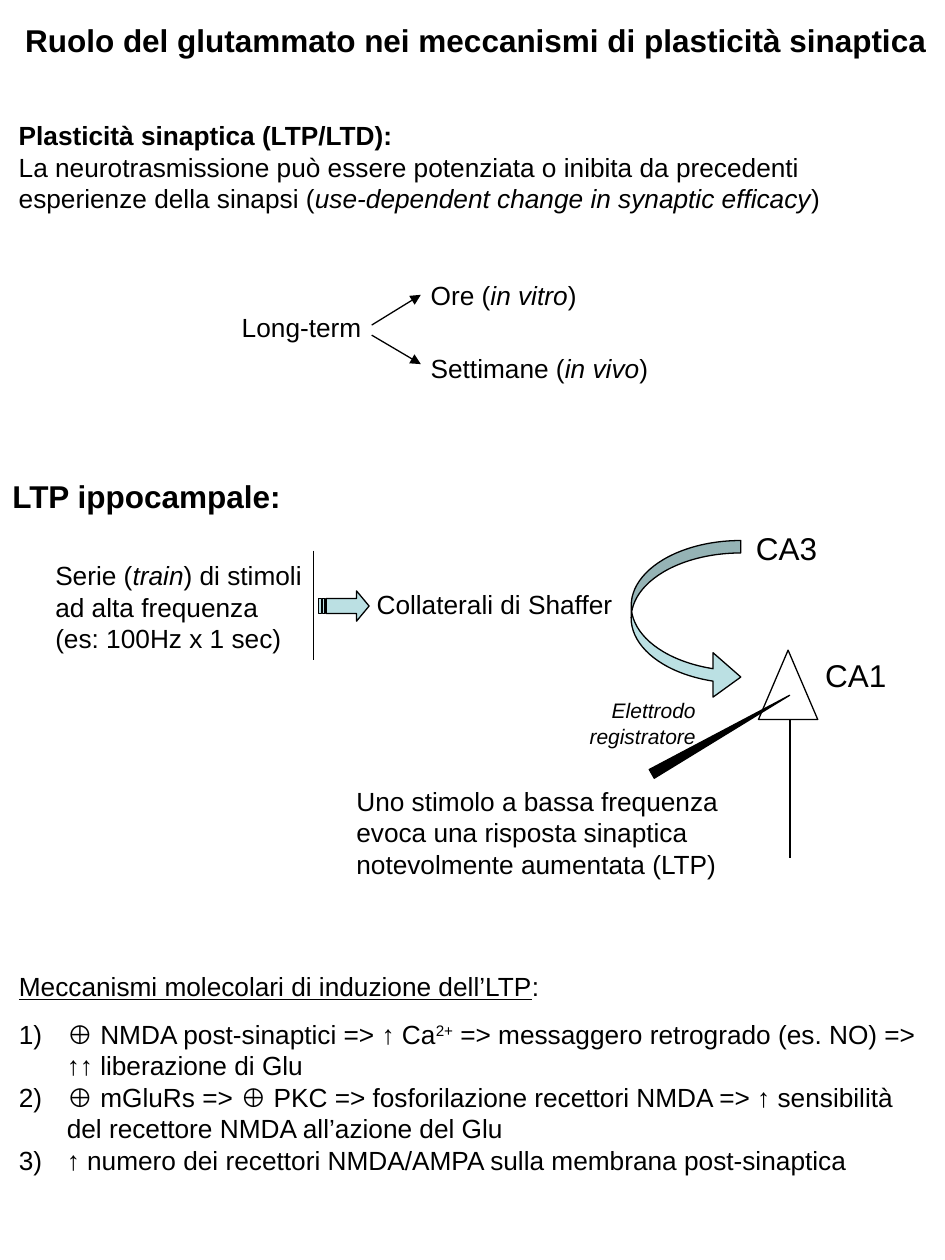
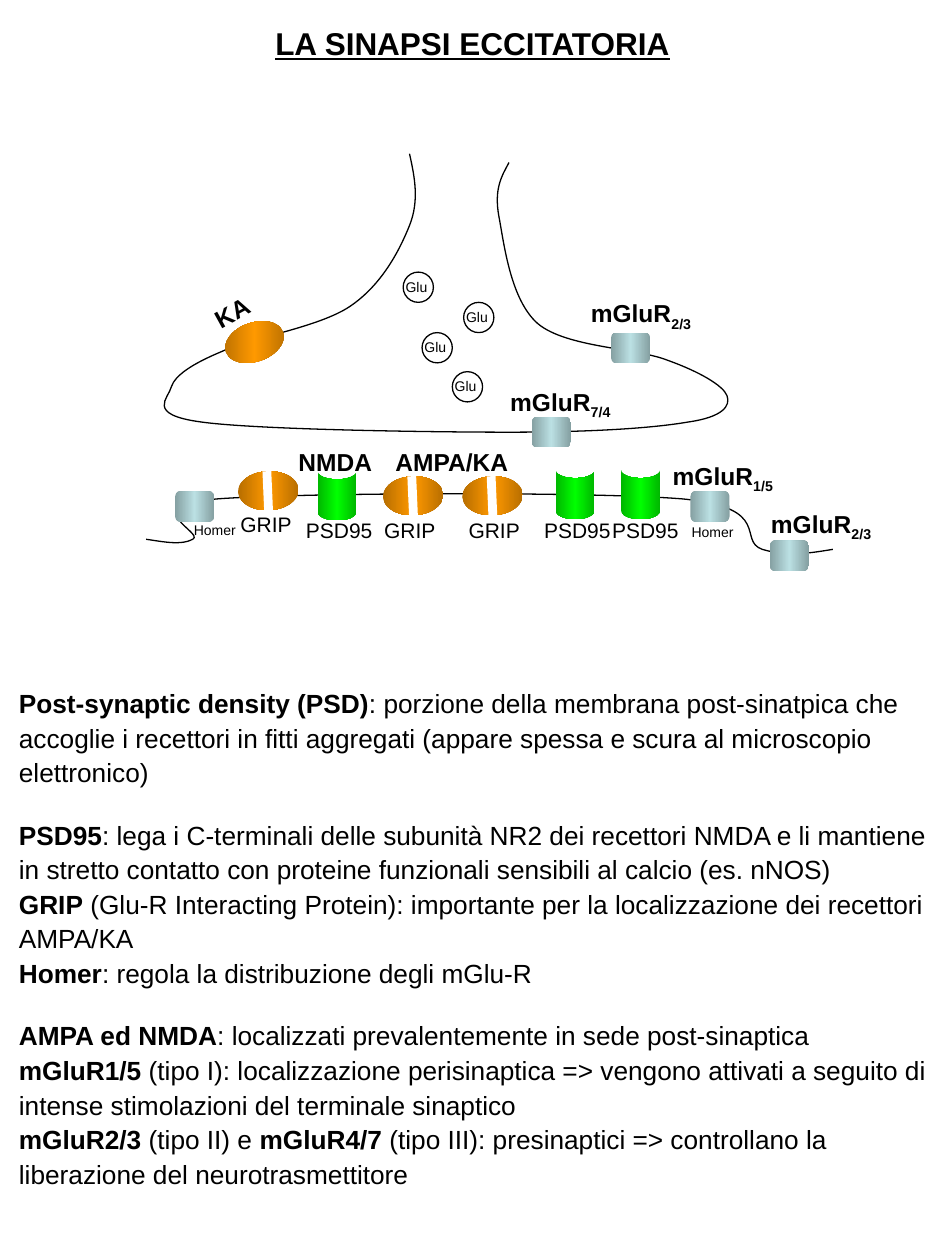
from copy import deepcopy
from dataclasses import dataclass
from typing import NamedTuple

from lxml.etree import SubElement
from pptx import Presentation
from pptx.dml.color import RGBColor
from pptx.enum.shapes import MSO_CONNECTOR, MSO_SHAPE
from pptx.enum.text import MSO_ANCHOR, MSO_AUTO_SIZE, PP_ALIGN
from pptx.oxml.ns import qn
from pptx.util import Pt

PX = 9144  # one px is a hundredth of an inch
FONT = "Arial"
COLORS = {
    "ink": "000000", "white": "FFFFFF", "ice": "BBE0E3",
    "gold": "FF9900", "lime": "00FF00",
}
BASE = {"^": "30000", "_": "-25000"}
SHADE = "46275"  # dark edge of each receptor


class Box(NamedTuple):
    x: int
    y: int
    w: int
    h: int


class Run(NamedTuple):
    text: str
    marks: str = ""  # b, i, u, ^ (raised), _ (lowered)


@dataclass
class Para:
    runs: list[Run]
    gap: float = 0
    hang: int = 0
    count: bool = False


@dataclass
class Kind:
    form: MSO_SHAPE
    w: int
    h: int
    color: str
    turn: float = 0


def tint(name: str) -> RGBColor:
    return RGBColor.from_string(COLORS[name])


# Text
def write(shape, box: Box, paras: list[Para], size: int, wrap: bool = False,
          align=PP_ALIGN.LEFT, lead: float = 1.0) -> None:
    shape.left, shape.top, shape.width, shape.height = (v * PX for v in box)
    frame = shape.text_frame
    frame.word_wrap = wrap
    frame.auto_size = MSO_AUTO_SIZE.SHAPE_TO_FIT_TEXT
    frame.vertical_anchor = MSO_ANCHOR.TOP
    for i, item in enumerate(paras):
        para = frame.add_paragraph() if i else frame.paragraphs[0]
        para.alignment = align
        para.line_spacing = lead
        para.space_before, para.space_after = Pt(item.gap), Pt(0)
        props = para._p.get_or_add_pPr()
        props.set("marL", str(item.hang * PX))
        props.set("indent", str(-item.hang * PX))
        if item.count:
            SubElement(props, qn("a:buFont"), typeface="+mj-lt")
            SubElement(props, qn("a:buAutoNum"), type="arabicParenR")
        else:
            SubElement(props, qn("a:buNone"))
        for part in item.runs:
            run = para.add_run()
            run.text = part.text
            font = run.font
            font.name, font.size = FONT, Pt(size)
            font.color.rgb = tint("ink")
            font.bold, font.italic = "b" in part.marks, "i" in part.marks
            font.underline = "u" in part.marks
            for mark, shift in BASE.items():
                if mark in part.marks:
                    run._r.get_or_add_rPr().set("baseline", shift)


def label(slide, box: Box, paras: list[Para], size: int = 15,
          wrap: bool = False, align=PP_ALIGN.LEFT, turn: float = 0) -> None:
    shape = slide.shapes.add_textbox(0, 0, 0, 0)
    write(shape, box, paras, size, wrap, align)
    shape.rotation = turn


def word(slide, box: Box, text: str, size: int = 15, marks: str = "",
         turn: float = 0) -> None:
    label(slide, box, [Para([Run(text, marks)])], size, turn=turn)


# Shapes
def dress(shape, fill: str = "", line: bool = True) -> None:
    shape.shadow.inherit = False
    if fill:
        shape.fill.solid()
        shape.fill.fore_color.rgb = tint(fill)
    else:
        shape.fill.background()
    if line:
        shape.line.color.rgb = tint("ink")
        shape.line.width = Pt(0.75)
    else:
        shape.line.fill.background()


def draw(slide, form: MSO_SHAPE, box: Box, fill: str = "", line: bool = True,
         turn: float = 0, adjust: tuple = ()):
    shape = slide.shapes.add_shape(form, *(v * PX for v in box))
    dress(shape, fill, line)
    shape.rotation = turn
    for i, value in enumerate(adjust):
        shape.adjustments[i] = value
    return shape


def place(slide, kind: Kind, x: int, y: int, turn: float | None = None) -> None:
    shape = draw(slide, kind.form, Box(x, y, kind.w, kind.h), line=False,
                 turn=kind.turn if turn is None else turn)
    fill = shape.fill
    fill.gradient()
    fill.gradient_angle = 0
    grad = shape._element.spPr.find(qn("a:gradFill"))
    grad.set("rotWithShape", "0")
    stops = grad.find(qn("a:gsLst"))
    stops.insert(1, deepcopy(stops[0]))
    for stop, spot in zip(fill.gradient_stops, (0, 0.5, 1)):
        stop.position = spot
        stop.color.rgb = tint(kind.color)
    for edge in (stops[0], stops[2]):
        SubElement(edge[0], qn("a:shade"), val=SHADE)


def link(slide, start: tuple, end: tuple, arrow: bool = False) -> None:
    line = slide.shapes.add_connector(
        MSO_CONNECTOR.STRAIGHT, *(v * PX for v in start + end))
    line.line.color.rgb = tint("ink")
    line.line.width = Pt(0.75)
    if arrow:
        SubElement(line.line._get_or_add_ln(), qn("a:tailEnd"), type="triangle")
    SubElement(line._element.spPr, qn("a:effectLst"))


def trace(slide, paths: list, fill: str = "", close: bool = True):
    pen = slide.shapes.build_freeform(*(v * PX for v in paths[0][0]), scale=1.0)
    for i, path in enumerate(paths):
        points = [(x * PX, y * PX) for x, y in path]
        if i:
            pen.move_to(*points[0])
        pen.add_line_segments(points[1:], close=close)
    shape = pen.convert_to_shape()
    dress(shape, fill)
    return shape


def curve(slide, knots: list) -> None:
    shape = trace(slide, [knots], close=False)
    track = next(shape._element.iter(qn("a:path")))
    lines = track.findall(qn("a:lnTo"))
    for i in range(0, len(lines), 3):
        bend = SubElement(track, qn("a:cubicBezTo"))
        for line in lines[i:i + 3]:
            bend.append(line[0])
            track.remove(line)


def start(deck, head: Run, spot: Box, align):
    slide = deck.slides.add_slide(deck.slide_layouts[1])
    write(slide.shapes.title, spot, [Para([head])], 18, align=align)
    return slide, slide.placeholders[1]


# Slide 1: plasticity and LTP
def plastic(deck) -> None:
    slide, body = start(
        deck, Run("Ruolo del glutammato nei meccanismi di plasticità sinaptica", "b"),
        Box(10, 12, 740, 40), PP_ALIGN.LEFT)
    label(slide, Box(5, 90, 745, 85), [
        Para([Run("Plasticità sinaptica (LTP/LTD):", "b")]),
        Para([Run("La neurotrasmissione può essere potenziata o inibita da precedenti "
                  "esperienze della sinapsi ("),
              Run("use-dependent change in synaptic efficacy", "i"), Run(")")]),
    ], wrap=True)

    # Duration fork
    word(slide, Box(182, 242, 115, 35), "Long-term")
    link(slide, (295, 258), (334, 234), arrow=True)
    link(slide, (295, 266), (334, 289), arrow=True)
    label(slide, Box(332, 217, 193, 93), [
        Para([Run("Ore ("), Run("in vitro", "i"), Run(")")]),
        Para([Run("Settimane ("), Run("in vivo", "i"), Run(")")], gap=23.4),
    ])

    # Stimulus
    word(slide, Box(0, 374, 235, 40), "LTP ippocampale:", 18, "b")
    label(slide, Box(34, 439, 238, 85), [
        Para([Run("Serie ("), Run("train", "i"), Run(") di stimoli ad alta frequenza")]),
        Para([Run("(es: 100Hz x 1 sec)")]),
    ], wrap=True)
    link(slide, (249, 437), (249, 524))
    head = [(283, 469), (283, 475), (259, 475), (259, 487),
            (283, 487), (283, 493), (293, 481)]
    bars = [[(a, 475), (a, 487), (b, 487), (b, 475)] for a, b in ((256, 258), (253, 255))]
    trace(slide, [head, *bars], "ice")
    word(slide, Box(289, 462, 208, 35), "Collaterali di Shaffer")

    # Neurons and electrode
    draw(slide, MSO_SHAPE.CURVED_RIGHT_ARROW, Box(501, 429, 87, 126), "ice",
         adjust=(0.114, 0.405, 0.253))
    word(slide, Box(590, 415, 69, 40), "CA3", 18)
    word(slide, Box(645, 516, 69, 40), "CA1", 18)
    draw(slide, MSO_SHAPE.ISOSCELES_TRIANGLE, Box(602, 516, 47, 55))
    link(slide, (627, 571), (627, 681))
    draw(slide, MSO_SHAPE.ISOSCELES_TRIANGLE, Box(568, 520, 8, 126), "ink",
         turn=60.3, adjust=(0.511,))
    label(slide, Box(273, 618, 314, 85), [Para([Run(
        "Uno stimolo a bassa frequenza evoca una risposta sinaptica "
        "notevolmente aumentata (LTP)")])], wrap=True)
    label(slide, Box(450, 549, 112, 50), [Para([Run("Elettrodo registratore", "i")])],
          12, wrap=True, align=PP_ALIGN.RIGHT)

    # Mechanisms
    write(body, Box(5, 765, 745, 173), [
        Para([Run("Meccanismi molecolari di induzione dell’LTP", "u"), Run(":")], hang=38),
        Para([Run("⊕ NMDA post-sinaptici => ↑ Ca"), Run("2+", "^"),
              Run(" => messaggero retrogrado (es. NO) => ↑↑ liberazione di Glu")],
             gap=9.2, hang=38, count=True),
        Para([Run("⊕ mGluRs => ⊕ PKC => fosforilazione recettori NMDA => ↑ sensibilità "
                  "del recettore NMDA all’azione del Glu")], hang=38, count=True),
        Para([Run("↑ numero dei recettori NMDA/AMPA sulla membrana post-sinaptica")],
             hang=38, count=True),
    ], 15, wrap=True)


# Slide 2: the synapse
def synapse(deck) -> None:
    slide, body = start(deck, Run("LA SINAPSI ECCITATORIA", "bu"),
                        Box(206, 14, 338, 40), PP_ALIGN.CENTER)
    block = Kind(MSO_SHAPE.FLOWCHART_ALTERNATE_PROCESS, 31, 24, "ice")
    disc = Kind(MSO_SHAPE.OVAL, 48, 31, "gold", 357.5)
    cup = Kind(MSO_SHAPE.FLOWCHART_STORED_DATA, 39, 31, "lime", 270)

    # Membranes
    curve(slide, [
        (325, 122), (329, 140), (333, 159), (325, 179), (317, 199), (303, 226),
        (278, 243), (253, 260), (199, 268), (176, 279), (152, 289), (139, 298),
        (136, 307), (134, 316), (115, 329), (160, 335), (204, 341), (340, 343),
        (404, 343), (468, 343), (517, 340), (546, 335), (574, 331), (580, 322),
        (577, 314), (574, 306), (555, 295), (530, 286), (505, 276), (450, 276),
        (427, 257), (405, 238), (400, 193), (396, 172), (392, 150), (398, 140),
        (404, 129)])
    curve(slide, [
        (116, 428), (130, 430), (144, 433), (153, 428), (163, 423), (107, 402),
        (172, 396), (237, 391), (470, 390), (542, 396), (614, 403), (585, 429),
        (605, 436), (625, 442), (643, 439), (661, 436)])

    # Vesicles
    for x, y in ((320, 216), (335, 264), (359, 295), (368, 240)):
        draw(slide, MSO_SHAPE.OVAL, Box(x, y, 24, 24))
        word(slide, Box(x - 8, y, 39, 23), "Glu", 8)

    # Receptors
    for x, y in ((422, 331), (485, 264), (611, 429), (548, 390), (139, 390)):
        place(slide, block, x, y)
    place(slide, disc, 178, 256, turn=341)
    for x, y in ((304, 378), (367, 378), (189, 374)):
        place(slide, disc, x, y)
        draw(slide, MSO_SHAPE.RECTANGLE, Box(x + 20, y, 7, 31), "white", False, disc.turn)
    for x, y in ((489, 377), (437, 377), (248, 378)):
        place(slide, cup, x, y)

    # Labels
    for text, size, w, h, spots in (
            ("GRIP", 12, 61, 30, ((295, 406), (362, 406), (181, 401))),
            ("PSD95", 12, 74, 30, ((233, 406), (422, 406), (476, 406))),
            ("Homer", 8, 56, 23, ((144, 409), (539, 411)))):
        for x, y in spots:
            word(slide, Box(x, y, w, h), text, size)
    word(slide, Box(160, 231, 48, 33), "KA", 14, "b", turn=331.2)
    for sub, x, y in (("2/3", 459, 232), ("7/4", 395, 302),
                      ("1/5", 524, 361), ("2/3", 602, 399)):
        label(slide, Box(x, y, 101, 33), [Para([Run("mGluR", "b"), Run(sub, "b_")])], 14)
    word(slide, Box(227, 350, 81, 33), "NMDA", 14, "b")
    word(slide, Box(304, 350, 111, 33), "AMPA/KA", 14, "b")

    # Notes on the proteins
    write(body, Box(5, 538, 745, 411), [
        Para([Run("Post-synaptic density (PSD)", "b"),
              Run(": porzione della membrana post-sinatpica che accoglie i recettori in "
                  "fitti aggregati (appare spessa e scura al microscopio elettronico)")]),
        Para([Run("PSD95", "b"),
              Run(": lega i C-terminali delle subunità NR2 dei recettori NMDA e li mantiene "
                  "in stretto contatto con proteine funzionali sensibili al calcio "
                  "(es. nNOS)")], gap=15.8),
        Para([Run("GRIP", "b"),
              Run(" (Glu-R Interacting Protein): importante per la localizzazione dei "
                  "recettori AMPA/KA")]),
        Para([Run("Homer", "b"), Run(": regola la distribuzione degli mGlu-R")]),
        Para([Run("AMPA ed NMDA", "b"),
              Run(": localizzati prevalentemente in sede post-sinaptica")], gap=15.8),
        Para([Run("mGluR1/5", "b"),
              Run(" (tipo I): localizzazione perisinaptica => vengono attivati a seguito di "
                  "intense stimolazioni del terminale sinaptico")]),
        Para([Run("mGluR2/3", "b"), Run(" (tipo II) e "), Run("mGluR4/7", "b"),
              Run(" (tipo III): presinaptici => controllano la liberazione del "
                  "neurotrasmettitore")]),
    ], 15, wrap=True, lead=1.1)


def main() -> None:
    deck = Presentation()
    deck.slide_width, deck.slide_height = 750 * PX, 1000 * PX
    plastic(deck)
    synapse(deck)
    deck.save("out.pptx")


if __name__ == "__main__":
    main()
